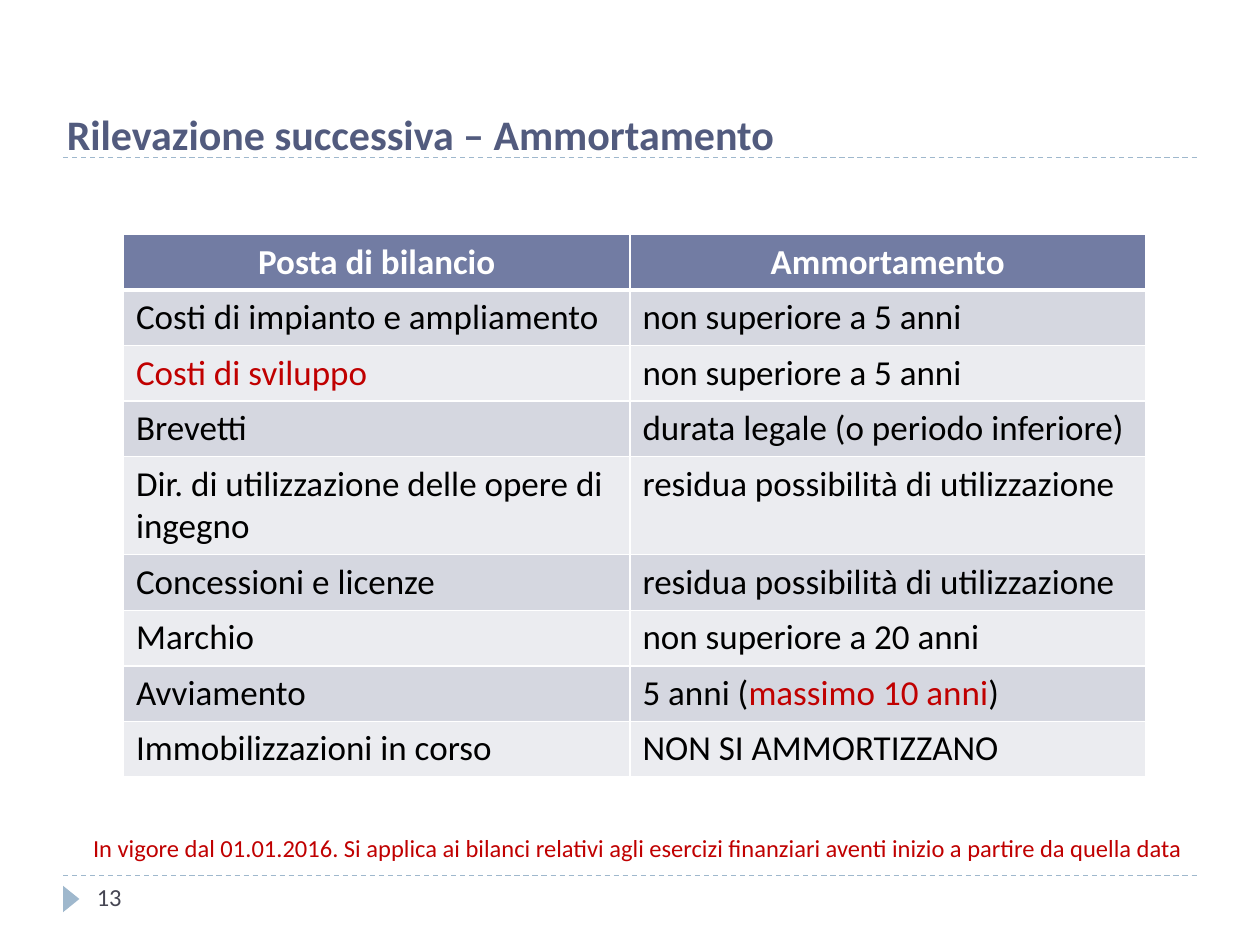
from lxml import etree
from pptx import Presentation
from pptx.dml.color import RGBColor
from pptx.enum import dml, shapes, text
from pptx.oxml import ns
from pptx.util import Inches, Pt

COLOURS = {
    "rule": "9FB8CD",
    "title": "525B7E",
    "header": "727CA3",
    "band_dark": "D5D7E0",
    "band_light": "EBECF0",
    "white": "FFFFFF",
    "black": "000000",
    "accent": "C00000",
    "number": "464653",
}
FONT = "Calibri"
HEADER = ("Posta di bilancio", "Ammortamento")
ROWS = [
    ("Costi di impianto e ampliamento", "non superiore a 5 anni"),
    ([("Costi di sviluppo", "accent")], "non superiore a 5 anni"),
    ("Brevetti", "durata legale (o periodo inferiore)"),
    ("Dir. di utilizzazione delle opere di ingegno", "residua possibilità di utilizzazione"),
    ("Concessioni e licenze", "residua possibilità di utilizzazione"),
    ("Marchio", "non superiore a 20 anni"),
    ("Avviamento", [("5 anni (", "black"), ("massimo 10 anni", "accent"), (")", "black")]),
    ("Immobilizzazioni in corso", "NON SI AMMORTIZZANO"),
]


def colour(name):
    return RGBColor.from_string(COLOURS[name])


def set_font(font, size, name, bold=False):
    font.name = FONT
    font.size = Pt(size)
    font.bold = bold
    font.color.rgb = colour(name)


def place(shape, left, top, width, height):
    shape.left, shape.top = Inches(left), Inches(top)
    shape.width, shape.height = Inches(width), Inches(height)


def write(frame, wording, size, name, bold=False, align=text.PP_ALIGN.LEFT):
    frame.word_wrap = True
    frame.vertical_anchor = text.MSO_ANCHOR.TOP
    para = frame.paragraphs[0]
    para.text = wording
    para.alignment = align
    set_font(para.font, size, name, bold)


def add_title(page, wording):
    title = page.shapes.title
    place(title, 0.43, 0.81, 8.91, 0.5)
    title.text_frame.auto_size = text.MSO_AUTO_SIZE.NONE
    write(title.text_frame, wording, 24, "title", bold=True)


def add_text(page, wording, area, size, name, align=text.PP_ALIGN.LEFT):
    box = page.shapes.add_textbox(*map(Inches, area))
    write(box.text_frame, wording, size, name, align=align)


def add_rule(page, top):
    rule = page.shapes.add_connector(
        shapes.MSO_CONNECTOR.STRAIGHT, Inches(0.5), Inches(top), Inches(9.5), Inches(top)
    )
    rule.line.color.rgb = colour("rule")
    rule.line.width = Pt(0.75)
    rule.line.dash_style = dml.MSO_LINE.DASH
    etree.SubElement(rule._element.spPr, ns.qn("a:effectLst"))


def add_marker(page):
    marker = page.shapes.add_shape(
        shapes.MSO_SHAPE.ISOSCELES_TRIANGLE,
        Inches(0.46), Inches(7.07), Inches(0.21), Inches(0.13),
    )
    marker.rotation = 90
    marker.shadow.inherit = False
    marker.fill.solid()
    marker.fill.fore_color.rgb = colour("rule")
    marker.line.fill.background()


def set_borders(cell, widths):
    properties = cell._tc.get_or_add_tcPr()
    for side, width in zip("LRTB", widths):
        border = etree.SubElement(properties, ns.qn(f"a:ln{side}"), w=str(Pt(width)))
        fill = etree.SubElement(border, ns.qn("a:solidFill"))
        etree.SubElement(fill, ns.qn("a:srgbClr"), val=COLOURS["white"])


def fill_cell(cell, content, is_header, band, borders):
    set_borders(cell, borders)
    cell.fill.solid()
    cell.fill.fore_color.rgb = colour(band)
    para = cell.text_frame.paragraphs[0]
    para.alignment = text.PP_ALIGN.CENTER if is_header else text.PP_ALIGN.LEFT
    default = "white" if is_header else "black"
    set_font(para.font, 20, default, is_header)
    spans = [(content, default)] if isinstance(content, str) else content
    for wording, name in spans:
        span = para.add_run()
        span.text = wording
        set_font(span.font, 20, name, is_header)


def add_schedule(page):
    rows = [HEADER] + ROWS
    table = page.shapes.add_table(
        len(rows), len(HEADER), Inches(0.98), Inches(1.86), Inches(8.11), Inches(4.23)
    ).table
    for column, width in zip(table.columns, (4.02, 4.09)):
        column.width = Inches(width)
    for index, contents in enumerate(rows):
        is_header = index == 0
        table.rows[index].height = Inches(0.35 if is_header else 0.41)
        band = "header" if is_header else ("band_light", "band_dark")[index % 2]
        borders = (1, 1, 3 if index == 1 else 1, 3 if is_header else 1)
        for cell, content in zip(table.rows[index].cells, contents):
            fill_cell(cell, content, is_header, band, borders)


def main():
    deck = Presentation()
    deck.slide_width, deck.slide_height = Inches(10), Inches(7.5)
    page = deck.slides.add_slide(deck.slide_layouts[5])
    for top in (6.95, 1.25):
        add_rule(page, top)
    add_marker(page)
    add_title(page, "Rilevazione successiva – Ammortamento")
    add_schedule(page)
    add_text(page, "13", (0.67, 6.95, 2.17, 0.4), 14, "number")
    add_text(
        page,
        "In vigore dal 01.01.2016. Si applica ai bilanci relativi agli esercizi "
        "finanziari aventi inizio a partire da quella data",
        (0.64, 6.56, 9.09, 0.57), 14, "accent", text.PP_ALIGN.JUSTIFY,
    )
    deck.save("out.pptx")


if __name__ == "__main__":
    main()
